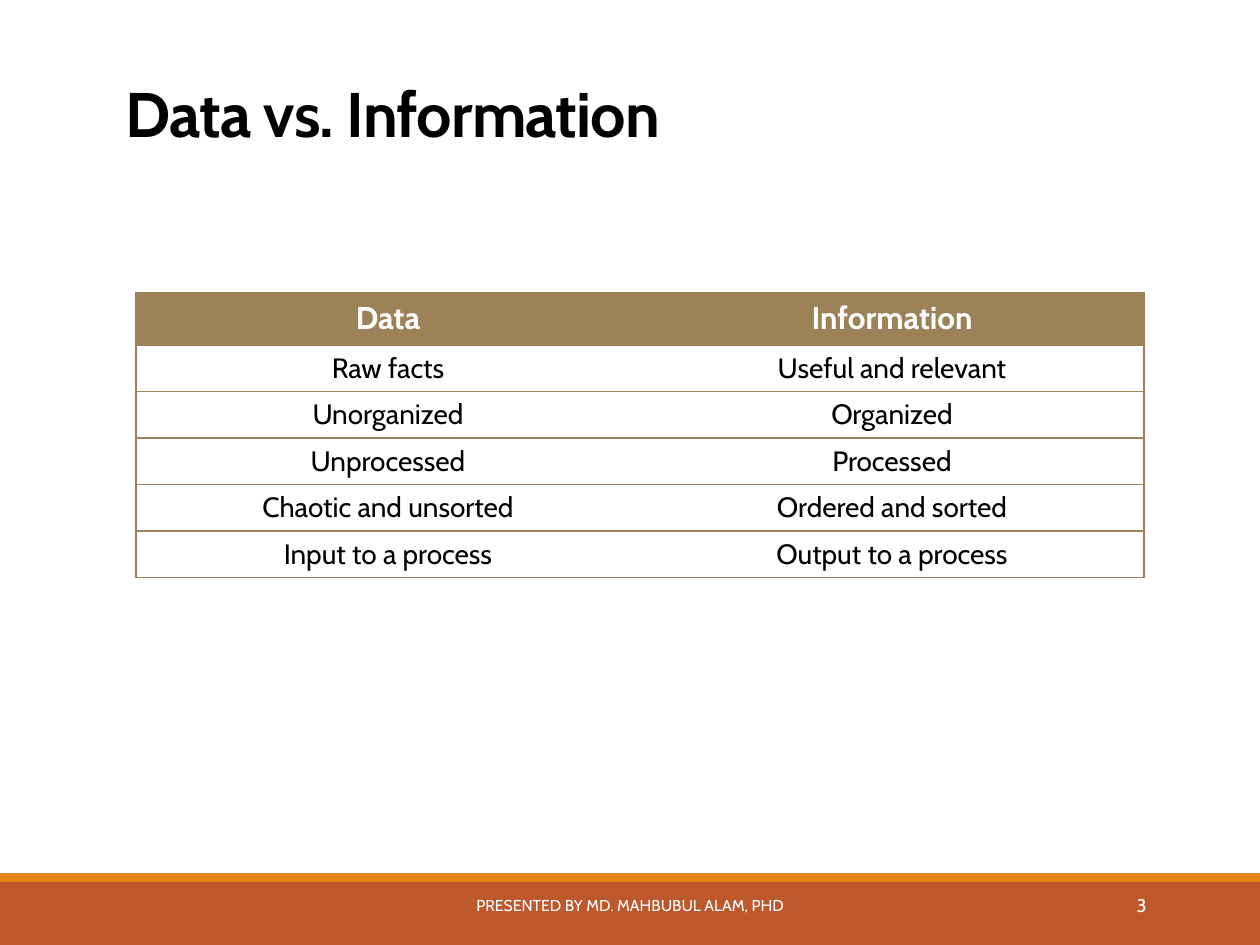
from lxml import etree
from pptx import Presentation, util as u
from pptx.dml.color import RGBColor
from pptx.enum import shapes, text
from pptx.oxml.ns import qn

PX = 914400 / 126
BLACK = RGBColor(0, 0, 0)
WHITE = RGBColor(255, 255, 255)
RUST = RGBColor(0xBD, 0x58, 0x2C)
ORANGE = RGBColor(0xE4, 0x83, 0x12)
TAN = RGBColor(0x9B, 0x83, 0x57)
LEFT, MID, RIGHT = text.PP_ALIGN.LEFT, text.PP_ALIGN.CENTER, text.PP_ALIGN.RIGHT

ROWS = [
    ("Data", "Information"),
    ("Raw facts", "Useful and relevant"),
    ("Unorganized", "Organized"),
    ("Unprocessed", "Processed"),
    ("Chaotic and unsorted", "Ordered and sorted"),
    ("Input to a process", "Output to a process"),
]


def px(n):
    return u.Emu(round(n * PX))


class Deck:
    font = "Cabin"

    def __init__(self):
        self.prs = Presentation()
        self.prs.slide_width, self.prs.slide_height = px(1260), px(945)
        self.slide = self.prs.slides.add_slide(self.prs.slide_layouts[5])

    def style(self, frame, words, size, color, align, bold=False):
        """Fill a text frame with one formatted paragraph."""
        frame.text = words
        par = frame.paragraphs[0]
        par.alignment = align
        font = par.font
        font.name, font.size, font.bold = self.font, u.Pt(size), bold
        font.color.rgb = color
        return par

    def title(self, words, x, y, w, h):
        box = self.slide.shapes.title
        box.left, box.top, box.width, box.height = map(px, (x, y, w, h))
        frame = box.text_frame
        frame.vertical_anchor = text.MSO_ANCHOR.BOTTOM
        par = self.style(frame, words, 36, BLACK, LEFT, True)
        par.line_spacing = 0.85
        par.runs[0].font._element.set("spc", "-50")

    def bar(self, y, h, color):
        bar = self.slide.shapes.add_shape(
            shapes.MSO_SHAPE.RECTANGLE, 0, px(y), px(1260), px(h))
        bar.shadow.inherit = False
        bar.fill.solid()
        bar.fill.fore_color.rgb = color
        bar.line.fill.background()

    def label(self, words, x, y, w, h, size, align):
        frame = self.slide.shapes.add_textbox(*map(px, (x, y, w, h))).text_frame
        frame.word_wrap = True
        frame.vertical_anchor = text.MSO_ANCHOR.MIDDLE
        self.style(frame, words, size, WHITE, align)

    def edge(self, cell, sides):
        """Draw the named sides of a cell and clear the others."""
        props = cell._tc.get_or_add_tcPr()
        for i, side in enumerate("LRTB"):
            line = etree.Element(qn(f"a:ln{side}"), w=str(u.Pt(1)))
            if side in sides:
                fill = etree.SubElement(line, qn("a:solidFill"))
                etree.SubElement(fill, qn("a:srgbClr"), val=str(TAN))
            else:
                etree.SubElement(line, qn("a:noFill"))
            props.insert(i, line)

    def table(self, rows, x, y, w, head, step):
        high = head + step * (len(rows) - 1)
        grid = self.slide.shapes.add_table(
            len(rows), len(rows[0]), *map(px, (x, y, w, high))).table
        grid.first_row = grid.horz_banding = False
        for r, row in enumerate(rows):
            top = r == 0
            grid.rows[r].height = px(head if top else step)
            for c, words in enumerate(row):
                cell = grid.cell(r, c)
                if top:
                    cell.fill.solid()
                    cell.fill.fore_color.rgb = TAN
                else:
                    cell.fill.background()
                self.style(cell.text_frame, words, 18 if top else 16,
                           WHITE if top else BLACK, MID, top)
                outer = ("L" if c == 0 else "") + ("R" if c == len(row) - 1 else "")
                self.edge(cell, "TB" + outer)


def main():
    deck = Deck()
    deck.bar(882, 63, RUST)
    deck.bar(873, 9, ORANGE)
    deck.title("Data vs. Information", 113, 53, 1040, 104)
    deck.table(ROWS, 136, 293, 1008, 52, 46)
    deck.label("PRESENTED BY MD. MAHBUBUL ALAM, PHD", 380, 890, 500, 30, 9, MID)
    deck.label("3", 1023, 890, 136, 30, 10.5, RIGHT)
    deck.prs.save("out.pptx")


if __name__ == "__main__":
    main()
